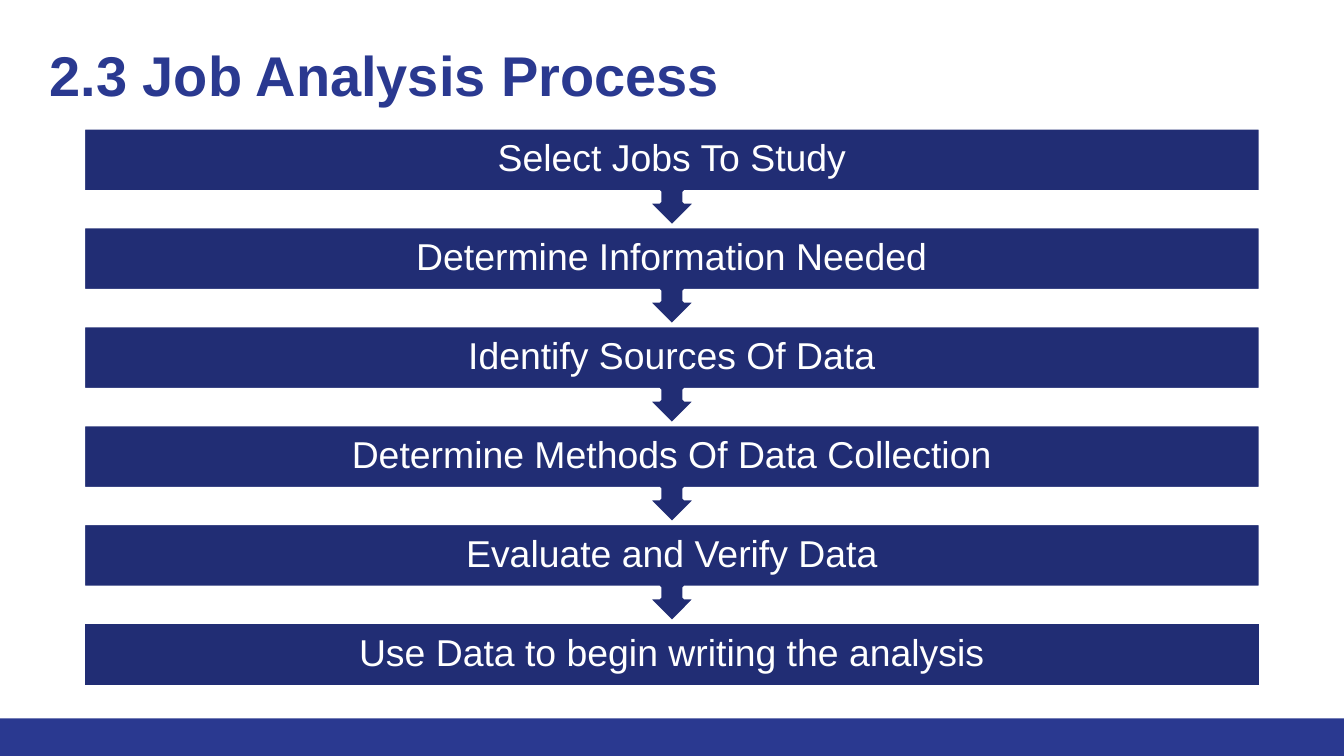
import pptx
import pptx.dml.color
import pptx.enum.shapes
import pptx.enum.text
import pptx.util

Inches = pptx.util.Inches
Pt = pptx.util.Pt
RGBColor = pptx.dml.color.RGBColor
MSO_SHAPE = pptx.enum.shapes.MSO_SHAPE

COLORS = {"accent": "2A3990", "step": "212D74", "white": "FFFFFF"}
WIDTH = 10
HEIGHT = WIDTH * 9 / 16
FOOTER_HEIGHT = 0.28
STEP_LEFT, STEP_TOP = 0.62, 0.95
STEP_WIDTH = WIDTH - 2 * STEP_LEFT
LAST_STEP_TOP = 4.63
BOX_SHARE = 0.65  # part of each callout taken by its box; the rest is the arrow

steps = [
    "Select Jobs To Study",
    "Determine Information Needed",
    "Identify Sources Of Data",
    "Determine Methods Of Data Collection",
    "Evaluate and Verify Data",
    "Use Data to begin writing the analysis",
]
step_pitch = (LAST_STEP_TOP - STEP_TOP) / (len(steps) - 1)


def color(name):
    return RGBColor.from_string(COLORS[name])


def add_filled_shape(kind, left, top, width, height, fill):
    shape = slide.shapes.add_shape(
        kind, Inches(left), Inches(top), Inches(width), Inches(height))
    shape.shadow.inherit = False
    shape.fill.solid()
    shape.fill.fore_color.rgb = color(fill)
    return shape


presentation = pptx.Presentation()
presentation.slide_width = Inches(WIDTH)
presentation.slide_height = Inches(HEIGHT)
slide = presentation.slides.add_slide(presentation.slide_layouts[6])

footer = add_filled_shape(
    MSO_SHAPE.RECTANGLE, 0, HEIGHT - FOOTER_HEIGHT, WIDTH, FOOTER_HEIGHT, "accent")
footer.line.fill.background()

title = slide.shapes.add_textbox(Inches(0.27), Inches(0.2), Inches(9.2), Inches(0.89))
title.text_frame.word_wrap = True
title.text_frame.margin_top = title.text_frame.margin_bottom = Inches(0.1)
paragraph = title.text_frame.paragraphs[0]
paragraph.text = "2.3 Job Analysis Process"
paragraph.font.name = "Arial"
paragraph.font.size = Pt(30)
paragraph.font.bold = True
paragraph.font.color.rgb = color("accent")

# From the last step up, so that each arrow lies over the box it points to
for index, text in reversed(list(enumerate(steps))):
    is_last = index == len(steps) - 1
    kind = MSO_SHAPE.RECTANGLE if is_last else MSO_SHAPE.DOWN_ARROW_CALLOUT
    height = step_pitch * (BOX_SHARE if is_last else 1)
    step = add_filled_shape(
        kind, STEP_LEFT, STEP_TOP + index * step_pitch, STEP_WIDTH, height, "step")
    if not is_last:
        step.adjustments[3] = BOX_SHARE
    step.line.color.rgb = color("white")
    step.line.width = Pt(2)

    frame = step.text_frame
    frame.word_wrap = True
    frame.margin_left = frame.margin_right = Inches(0.16)
    frame.margin_top = frame.margin_bottom = 0
    frame.vertical_anchor = pptx.enum.text.MSO_ANCHOR.MIDDLE
    paragraph = frame.paragraphs[0]
    paragraph.text = text
    paragraph.alignment = pptx.enum.text.PP_ALIGN.CENTER
    paragraph.line_spacing = 0.9
    paragraph.font.name = "Arial"
    paragraph.font.size = Pt(20)
    paragraph.font.color.rgb = color("white")

presentation.save("out.pptx")
